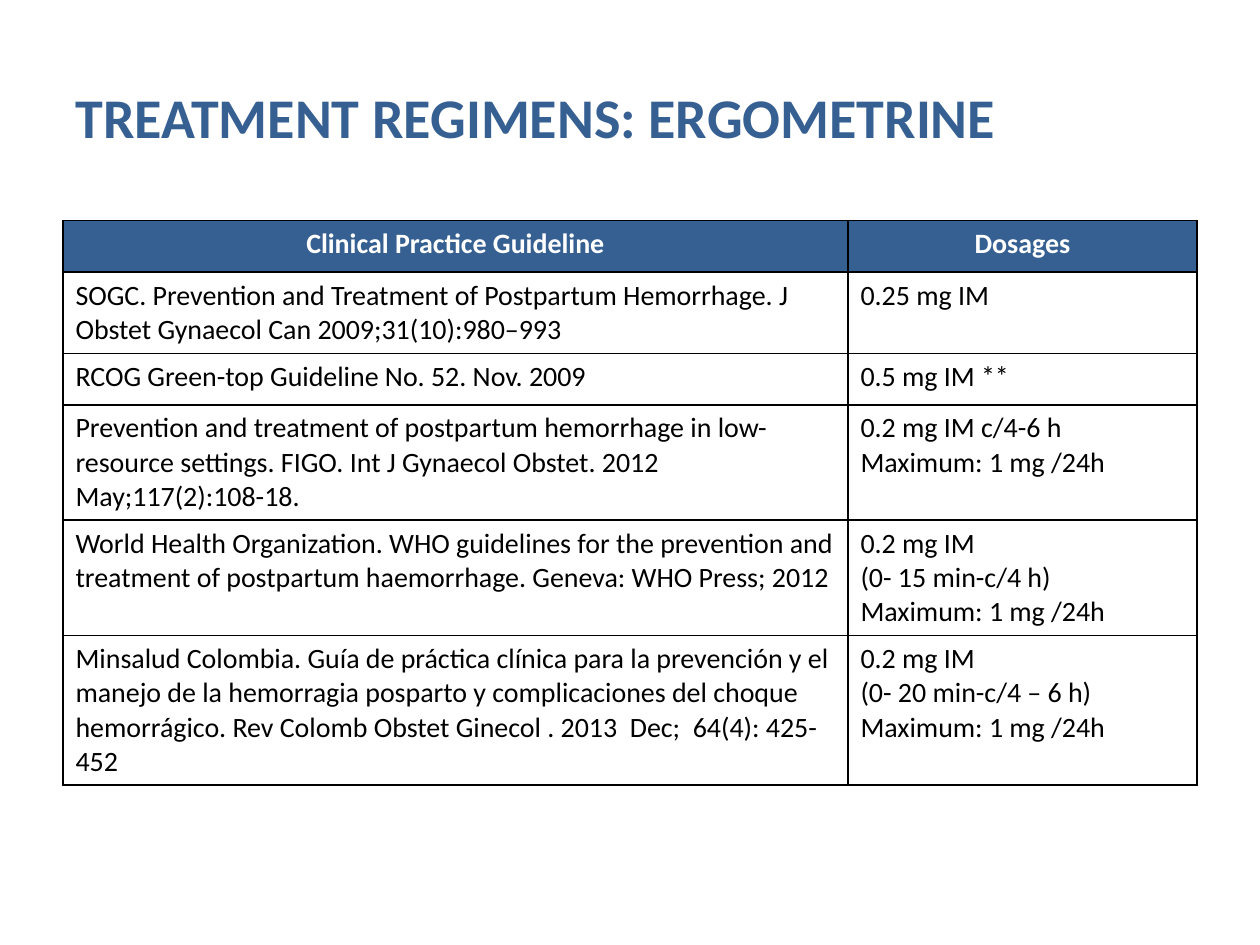
import pptx
import pptx.dml.color
import pptx.enum.text
import pptx.oxml
import pptx.oxml.ns
import pptx.util

BLUE = pptx.dml.color.RGBColor(0x37, 0x60, 0x92)
WHITE = pptx.dml.color.RGBColor(0xFF, 0xFF, 0xFF)
BLACK = pptx.dml.color.RGBColor(0x00, 0x00, 0x00)

TITLE = "TREATMENT REGIMENS: ERGOMETRINE"
HEADINGS = ("Clinical Practice Guideline", "Dosages")
REGIMENS = [
    ("SOGC. Prevention and Treatment of Postpartum Hemorrhage. "
     "J Obstet Gynaecol Can 2009;31(10):980–993",
     "0.25 mg IM"),
    ("RCOG Green-top Guideline No. 52. Nov. 2009",
     "0.5 mg IM **"),
    ("Prevention and treatment of postpartum hemorrhage in low-resource "
     "settings. FIGO. Int J Gynaecol Obstet. 2012 May;117(2):108-18.",
     "0.2 mg IM c/4-6 h\nMaximum: 1 mg /24h"),
    ("World Health Organization. WHO guidelines for the prevention and "
     "treatment of postpartum haemorrhage. Geneva: WHO Press; 2012",
     "0.2 mg IM\n(0- 15 min-c/4 h)\nMaximum: 1 mg /24h"),
    ("Minsalud Colombia. Guía de práctica clínica para la prevención y el "
     "manejo de la hemorragia posparto y complicaciones del choque "
     "hemorrágico. Rev Colomb Obstet Ginecol . 2013  Dec;  64(4): 425-452",
     "0.2 mg IM\n(0- 20 min-c/4 – 6 h)\nMaximum: 1 mg /24h"),
]


class GuidelineSlide:
    UNIT = pptx.util.Inches(0.25)
    FONT = "Calibri"
    BORDER = pptx.util.Pt(1)

    def __init__(self, deck):
        self.slide = deck.slides.add_slide(deck.slide_layouts[5])

    def units(self, *counts):
        return [round(count * self.UNIT) for count in counts]

    def wording(self, frame, text, align, size, color, bold):
        frame.text = text
        look = {"name": self.FONT, "size": pptx.util.Pt(size), "bold": bold}
        for paragraph in frame.paragraphs:
            paragraph.alignment = align
            for run in paragraph.runs:
                for key, value in look.items():
                    setattr(run.font, key, value)
                run.font.color.rgb = color

    def title(self, text, column, row, columns, rows):
        heading = self.slide.shapes.title
        place = zip(("left", "top", "width", "height"),
                    self.units(column, row, columns, rows))
        for key, value in place:
            setattr(heading, key, value)
        heading.text_frame.vertical_anchor = pptx.enum.text.MSO_ANCHOR.MIDDLE
        self.wording(heading.text_frame, text, pptx.enum.text.PP_ALIGN.LEFT,
                     32, BLUE, True)

    def border(self, cell):
        properties = cell._tc.get_or_add_tcPr()
        for side in ("lnL", "lnR", "lnT", "lnB"):
            properties.append(pptx.oxml.parse_xml(
                f'<a:{side} {pptx.oxml.ns.nsdecls("a")} w="{self.BORDER}">'
                f'<a:solidFill><a:srgbClr val="{BLACK}"/></a:solidFill>'
                f'</a:{side}>'))

    def cell(self, cell, text, is_heading):
        self.border(cell)
        if is_heading:
            cell.fill.solid()
            cell.fill.fore_color.rgb = BLUE
            align, color = pptx.enum.text.PP_ALIGN.CENTER, WHITE
        else:
            cell.fill.background()
            align, color = pptx.enum.text.PP_ALIGN.LEFT, BLACK
        self.wording(cell.text_frame, text, align, 16, color, is_heading)

    def table(self, records, column, row, widths, row_height):
        place = self.units(column, row, sum(widths), row_height * len(records))
        table = self.slide.shapes.add_table(
            len(records), len(widths), *place).table
        table.horz_banding = False
        for table_column, width in zip(table.columns, self.units(*widths)):
            table_column.width = width
        for index, record in enumerate(records):
            for position, text in enumerate(record):
                self.cell(table.cell(index, position), text, index == 0)


def main():
    deck = pptx.Presentation()
    deck.slide_width = pptx.util.Inches(10)
    deck.slide_height = pptx.util.Inches(7.5)
    page = GuidelineSlide(deck)
    page.title(TITLE, 2, 1.2, 36, 5)
    page.table([HEADINGS, *REGIMENS], 2, 7, (24.92, 11.08), 1.64)
    deck.save("out.pptx")


if __name__ == "__main__":
    main()
